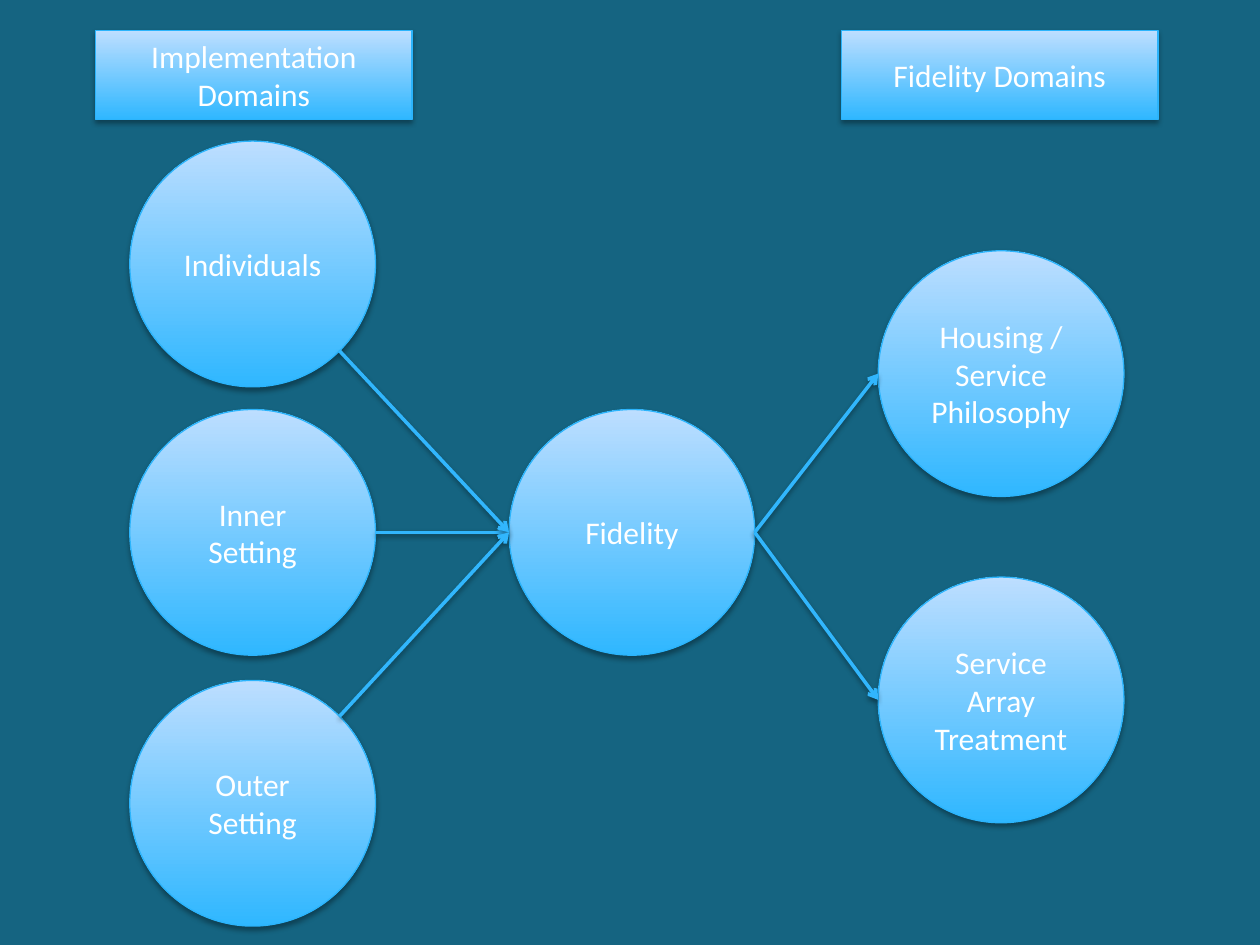
from math import cos, radians, sin

from pptx import Presentation
from pptx.dml.color import RGBColor
from pptx.enum.shapes import MSO_CONNECTOR, MSO_SHAPE
from pptx.enum.text import MSO_ANCHOR, PP_ALIGN
from pptx.oxml import parse_xml
from pptx.oxml.ns import nsdecls, qn
from pptx.util import Inches, Pt

BACKGROUND = RGBColor(0x15, 0x64, 0x81)
GRADIENT = (RGBColor(0x2F, 0xB7, 0xFF), RGBColor(0xBD, 0xDE, 0xFF))
OUTLINE = RGBColor(0x2B, 0xB4, 0xFC)
ARROW = RGBColor(0x31, 0xB6, 0xFD)
WHITE = RGBColor(0xFF, 0xFF, 0xFF)

# Content: headings as (text, left), circles as text: (left, top)
HEADINGS = [("Implementation Domains", 0.76), ("Fidelity Domains", 6.68)]
HEADING_TOP, HEADING_WIDTH, HEADING_HEIGHT = 0.24, 2.51, 0.71

DIAMETER = 1.95
DOMAIN_LEFT, FIDELITY_LEFT, RESULT_LEFT = 1.03, 4.04, 6.97
CIRCLES = {
    "Individuals": (DOMAIN_LEFT, 1.12),
    "Inner Setting": (DOMAIN_LEFT, 3.25),
    "Outer Setting": (DOMAIN_LEFT, 5.4),
    "Fidelity": (FIDELITY_LEFT, 3.25),
    "Housing / Service Philosophy": (RESULT_LEFT, 1.99),
    "Service Array Treatment": (RESULT_LEFT, 4.58),
}

# Arrows: start circle, leaving angle (clockwise from the right), end circle
ARROWS = [
    ("Inner Setting", 0, "Fidelity"),
    ("Individuals", 45, "Fidelity"),
    ("Outer Setting", -45, "Fidelity"),
    ("Fidelity", 0, "Housing / Service Philosophy"),
    ("Fidelity", 0, "Service Array Treatment"),
]


def add_shadow(shape, distance, opacity):
    shape._element.spPr.append(parse_xml(
        f'<a:effectLst {nsdecls("a")}>'
        f'<a:outerShdw blurRad="{Pt(3.1)}" dist="{Pt(distance)}" dir="5400000"'
        ' rotWithShape="0"><a:srgbClr val="000000">'
        f'<a:alpha val="{opacity * 1000}"/></a:srgbClr></a:outerShdw>'
        '</a:effectLst>'))


def add_box(page, kind, text, left, top, width, height):
    box = page.shapes.add_shape(
        kind, Inches(left), Inches(top), Inches(width), Inches(height))
    box.fill.gradient()
    box.fill.gradient_angle = 90
    for stop, color in zip(box.fill.gradient_stops, GRADIENT):
        stop.color.rgb = color
    box.line.color.rgb = OUTLINE
    box.line.width = Pt(0.75)
    add_shadow(box, 1.8, 35)
    frame = box.text_frame
    frame.word_wrap = True
    frame.vertical_anchor = MSO_ANCHOR.MIDDLE
    para = frame.paragraphs[0]
    para.alignment = PP_ALIGN.CENTER
    span = para.add_run()
    span.text = text
    span.font.name = "Calibri"
    span.font.size = Pt(18)
    span.font.color.rgb = WHITE


def rim_point(name, angle):
    left, top = CIRCLES[name]
    radius = DIAMETER / 2
    return (Inches(left + radius + radius * cos(radians(angle))),
            Inches(top + radius + radius * sin(radians(angle))))


def add_arrow(page, start, angle, end):
    arrow = page.shapes.add_connector(
        MSO_CONNECTOR.STRAIGHT, *rim_point(start, angle), *rim_point(end, 180))
    arrow.line.color.rgb = ARROW
    arrow.line.width = Pt(2)
    arrow._element.spPr.find(qn("a:ln")).append(
        parse_xml(f'<a:tailEnd {nsdecls("a")} type="arrow"/>'))
    add_shadow(arrow, 1.6, 38)


deck = Presentation()
deck.slide_width, deck.slide_height = Inches(10), Inches(7.5)
page = deck.slides.add_slide(deck.slide_layouts[6])
page.background.fill.solid()
page.background.fill.fore_color.rgb = BACKGROUND

# Headings, circles, then the arrows between them
for text, left in HEADINGS:
    add_box(page, MSO_SHAPE.RECTANGLE, text, left, HEADING_TOP,
            HEADING_WIDTH, HEADING_HEIGHT)
for text, (left, top) in CIRCLES.items():
    add_box(page, MSO_SHAPE.OVAL, text, left, top, DIAMETER, DIAMETER)
for start, angle, end in ARROWS:
    add_arrow(page, start, angle, end)

deck.save("out.pptx")
